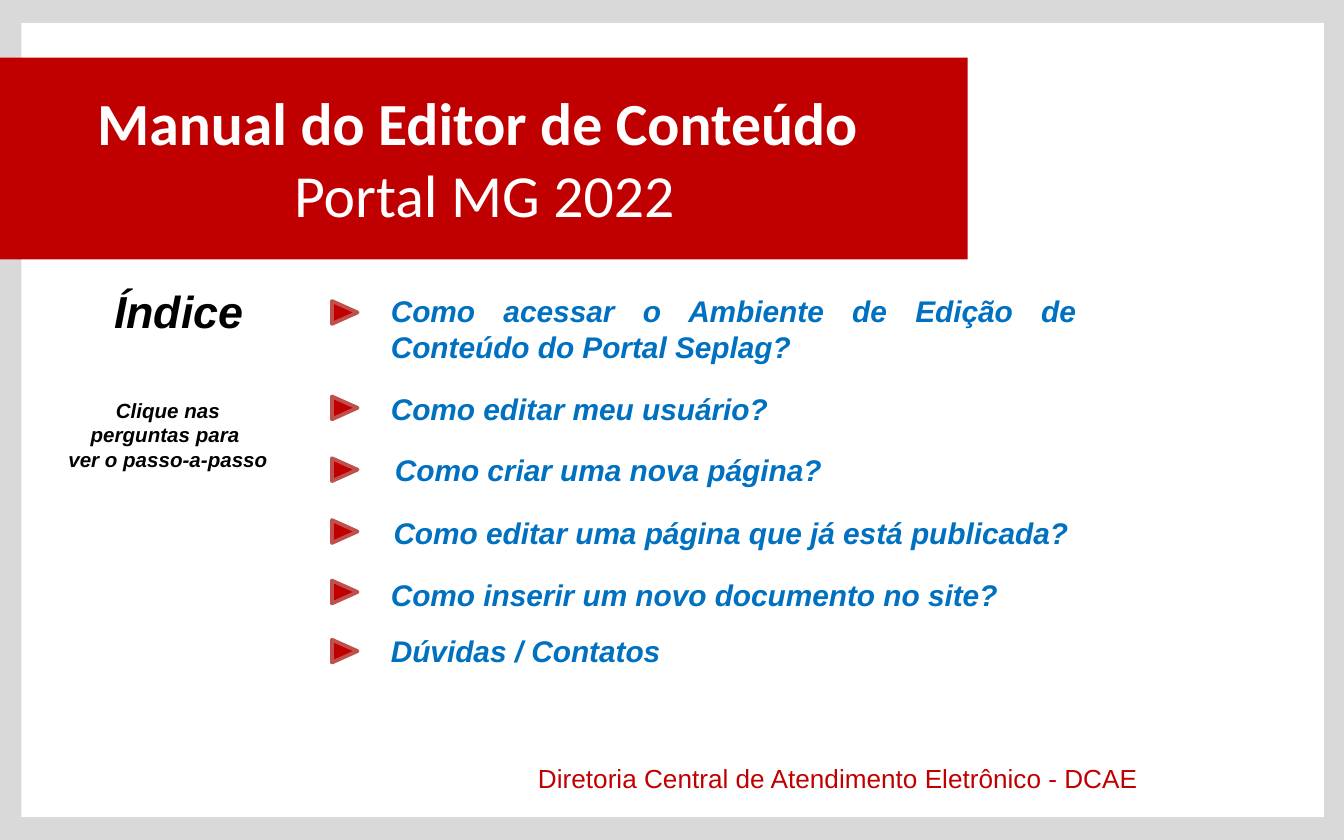
"""Build the index slide of the content editor's manual."""
from pptx import Presentation
from pptx import util as u
from pptx.dml.color import RGBColor
from pptx.enum import shapes, text

PX = 9144
WHITE = RGBColor(0xFF, 0xFF, 0xFF)
BLACK = RGBColor(0, 0, 0)
GRAY = RGBColor(0xD9, 0xD9, 0xD9)
RED = RGBColor(0xC0, 0, 0)
ROSE = RGBColor(0xC0, 0x50, 0x4D)
BLUE = RGBColor(0, 0x70, 0xC0)
CENTER, JUSTIFY = text.PP_ALIGN.CENTER, text.PP_ALIGN.JUSTIFY

deck = Presentation()
deck.slide_width, deck.slide_height = 1000 * PX, 625 * PX
slide = deck.slides.add_slide(deck.slide_layouts[6])


def add_block(kind, place, color):
    block = slide.shapes.add_shape(kind, *(n * PX for n in place))
    block.shadow.inherit = False
    block.fill.solid()
    block.fill.fore_color.rgb = color
    block.line.fill.background()
    return block


def add_words(place, lines, align, color, size, **looks):
    frame = slide.shapes.add_textbox(*(n * PX for n in place)).text_frame
    frame.word_wrap = True
    frame.text = "\n".join(lines)
    font_values = {"name": "Arial", "size": u.Pt(size), **looks}
    for paragraph in frame.paragraphs:
        paragraph.alignment = align
        font = paragraph.runs[0].font
        font.color.rgb = color
        for key, value in font_values.items():
            setattr(font, key, value)
    return frame


RECTANGLE = shapes.MSO_SHAPE.RECTANGLE
for place, color in [
    ((0, 0, 1000, 625), GRAY),
    ((16, 17, 969, 591), WHITE),
    ((0, 43, 720, 150), RED),
]:
    add_block(RECTANGLE, place, color)

title = add_words((10, 59, 701, 118), ["Manual do Editor de Conteúdo ", "Portal MG 2022"],
                  CENTER, WHITE, 32, name="Calibri", bold=True)
title.paragraphs[1].runs[0].font.bold = False

strong = {"bold": True, "italic": True}
add_words((75, 206, 121, 50), ["Índice"], JUSTIFY, BLACK, 24, **strong)
add_words((41, 291, 168, 66), ["Clique nas perguntas para ", "ver o passo-a-passo"],
          CENTER, BLACK, 11, **strong)

questions = [
    (223, (281, 213, 530, 64), "Como acessar o Ambiente de Edição de Conteúdo do Portal Seplag?"),
    (294, (281, 286, 530, 37), "Como editar meu usuário?"),
    (340, (284, 331, 530, 37), "Como criar uma nova página?"),
    (386, (283, 378, 603, 37), "Como editar uma página que já está publicada?"),
    (431, (281, 424, 530, 37), "Como inserir um novo documento no site?"),
    (475, (281, 466, 530, 37), "Dúvidas / Contatos"),
]
for marker_top, place, question in questions:
    marker = add_block(shapes.MSO_SHAPE.ISOSCELES_TRIANGLE, (248, marker_top, 17, 19), RED)
    marker.rotation = 90
    marker.line.color.rgb = ROSE
    marker.line.width = u.Pt(2)
    add_words(place, [question], JUSTIFY, BLUE, 16, **strong)

add_words((289, 562, 669, 34), ["Diretoria Central de Atendimento Eletrônico - DCAE"],
          CENTER, RED, 14)

deck.save("out.pptx")
